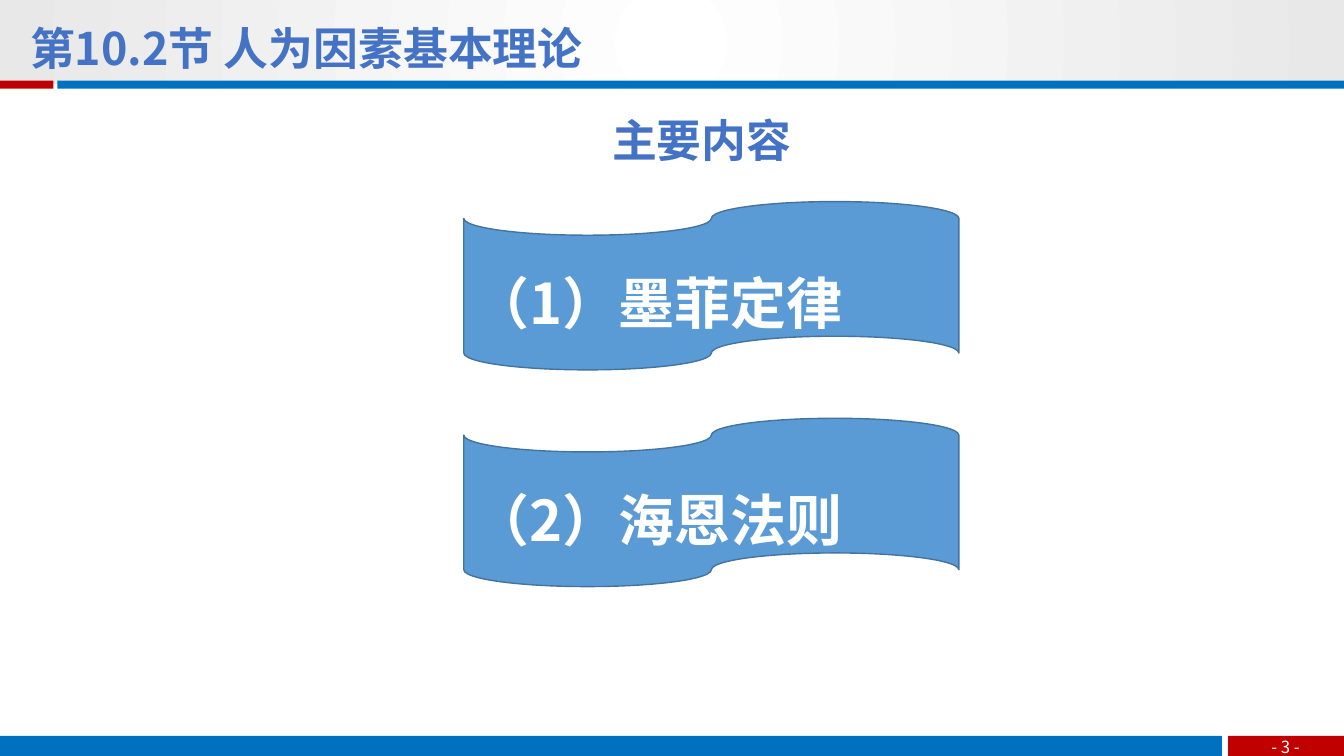
from lxml import etree
from pptx import Presentation
from pptx import util as u
from pptx.dml.color import RGBColor
from pptx.enum import shapes, text
from pptx.oxml.ns import qn

WHITE = RGBColor(0xFF, 0xFF, 0xFF)
GREY = RGBColor(0xE8, 0xE8, 0xE8)
BLUE = RGBColor(0x00, 0x70, 0xC0)
RED = RGBColor(0xC0, 0x00, 0x00)
TITLE = RGBColor(0x44, 0x72, 0xC4)
TAPE = RGBColor(0x5B, 0x9B, 0xD5)
EDGE = RGBColor(0x43, 0x73, 0x9E)
FONT = "Noto Sans CJK SC"
KIND = shapes.MSO_SHAPE
ALIGN = text.PP_ALIGN

deck = Presentation()
deck.slide_width = u.Inches(13.33)
deck.slide_height = u.Inches(7.5)
slide = deck.slides.add_slide(deck.slide_layouts[6])


def block(kind, area, fill):
    shape = slide.shapes.add_shape(kind, *map(u.Inches, area))
    shape.shadow.inherit = False
    shape.fill.solid()
    shape.fill.fore_color.rgb = fill
    shape.line.fill.background()
    return shape


def write(shape, words, size, color, align, bold=True):
    frame = shape.text_frame
    frame.word_wrap = bold
    para = frame.paragraphs[0]
    para.text = words
    para.alignment = align
    para.line_spacing = 1.5 if bold else 1.0
    font = para.font
    font.size = u.Pt(size)
    font.bold = bold
    font.color.rgb = color
    font.name = FONT
    east = etree.SubElement(para._p.pPr.find(qn("a:defRPr")), qn("a:ea"))
    east.set("typeface", FONT)
    return frame


head = block(KIND.RECTANGLE, (-0.02, 0, 13.35, 0.83), WHITE)
head.fill.gradient()
for stop, color in zip(head.fill.gradient_stops, (WHITE, GREY)):
    stop.color.rgb = color
grad = head._element.spPr.find(qn("a:gradFill"))
grad.remove(grad.find(qn("a:lin")))
round_ = etree.SubElement(grad, qn("a:path"), path="circle")
etree.SubElement(round_, qn("a:fillToRect"), l="50000", t="50000", r="50000", b="50000")

for left, top, width, height, color in (
    (0.57, 0.8, 12.77, 0.08, BLUE),
    (0, 0.8, 0.53, 0.08, RED),
    (0, 7.3, 12.12, 0.2, BLUE),
    (12.18, 7.3, 1.15, 0.2, RED),
):
    block(KIND.RECTANGLE, (left, top, width, height), color)

page = slide.shapes.add_textbox(*map(u.Inches, (12.36, 7.26, 0.78, 0.3)))
frame = write(page, "- 3 -", 12, WHITE, ALIGN.CENTER, False)
frame.vertical_anchor = text.MSO_ANCHOR.MIDDLE
frame.auto_size = text.MSO_AUTO_SIZE.SHAPE_TO_FIT_TEXT

for row, words in enumerate(("（1）墨菲定律", "（2）海恩法则")):
    tape = block(KIND.WAVE, (4.6, 2 + 2.15 * row, 4.91, 1.67), TAPE)
    tape.auto_shape_type
    tape._element.spPr.find(qn("a:prstGeom")).set("prst", "flowChartPunchedTape")
    tape.line.color.rgb = EDGE
    tape.line.width = u.Pt(1)
    frame = write(tape, words, 40, WHITE, ALIGN.LEFT)
    frame.vertical_anchor = text.MSO_ANCHOR.MIDDLE

for left, top, words in ((0, -0.11, "第10.2节 人为因素基本理论"), (3.92, 0.8, "主要内容")):
    box = slide.shapes.add_textbox(*map(u.Inches, (left, top, 6.08, 0.91)))
    frame = write(box, words, 32, TITLE, ALIGN.CENTER)
    frame.auto_size = text.MSO_AUTO_SIZE.SHAPE_TO_FIT_TEXT

deck.save("out.pptx")
